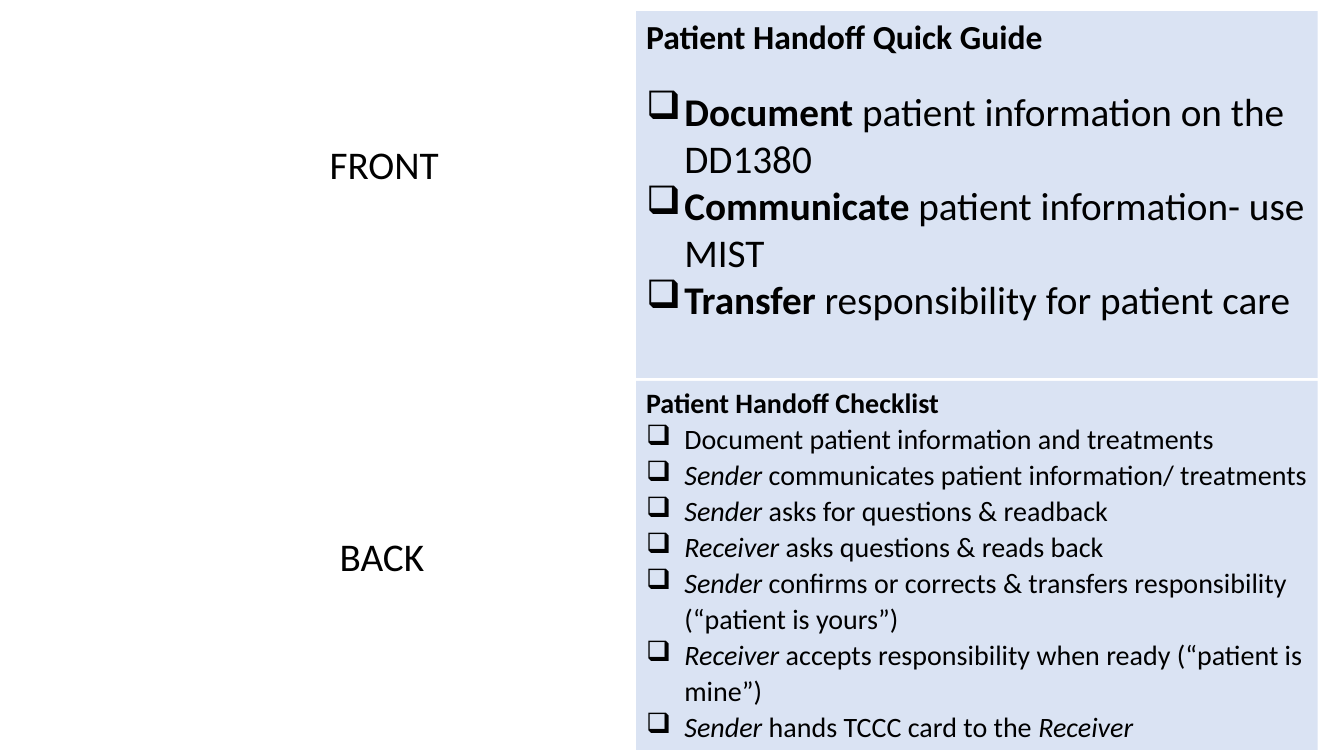
import pptx
import pptx.dml.color
import pptx.enum.shapes
import pptx.enum.text
import pptx.util
from pptx.oxml.xmlchemy import OxmlElement

Inches = pptx.util.Inches
Pt = pptx.util.Pt
BLACK = pptx.dml.color.RGBColor(0x00, 0x00, 0x00)
PALE_BLUE = pptx.dml.color.RGBColor(0xDA, 0xE3, 0xF3)
FONT = "Calibri"

SLIDE_WIDTH, SLIDE_HEIGHT = 13.33, 7.5
CARD_LEFT, CARD_WIDTH = 6.31, 6.76
ITEM_INDENT = 0.38

BOLD = {"bold": True}
ITALIC = {"italic": True}
PLAIN = {}

GUIDE_STEPS = [
    [("Document", BOLD), (" patient information on the DD1380", PLAIN)],
    [("Communicate ", BOLD), ("patient information- use MIST", PLAIN)],
    [("Transfer ", BOLD), ("responsibility for patient care", PLAIN)],
]
CHECKLIST_STEPS = [
    [("Document patient information and treatments", PLAIN)],
    [("Sender ", ITALIC), ("communicates patient information/ treatments", PLAIN)],
    [("Sender ", ITALIC), ("asks for questions & readback", PLAIN)],
    [("Receiver ", ITALIC), ("asks questions & reads back", PLAIN)],
    [("Sender ", ITALIC),
     ("confirms or corrects & transfers responsibility (“patient is yours”)", PLAIN)],
    [("Receiver", ITALIC),
     (" accepts responsibility when ready (“patient is mine”)", PLAIN)],
    [("Sender", ITALIC), (" hands TCCC card to the ", PLAIN), ("Receiver", ITALIC)],
]


def write_runs(paragraph, runs, size):
    paragraph.alignment = pptx.enum.text.PP_ALIGN.LEFT
    for words, emphasis in runs:
        run = paragraph.add_run()
        run.text = words
        run.font.color.rgb = BLACK
        for name, value in {"name": FONT, "size": Pt(size), **emphasis}.items():
            setattr(run.font, name, value)


def add_checkbox(paragraph):
    properties = paragraph._p.get_or_add_pPr()
    properties.set("marL", str(Inches(ITEM_INDENT)))
    properties.set("indent", str(-Inches(ITEM_INDENT)))
    bullet = OxmlElement("a:buChar")
    bullet.set("char", "❑")
    properties.append(bullet)


def add_card(slide, box, title, steps, title_size, step_size, title_gap, spacing):
    """Blue card with a bold title above a list of checkbox steps."""
    card = slide.shapes.add_shape(
        pptx.enum.shapes.MSO_SHAPE.RECTANGLE, *map(Inches, box))
    card.shadow.inherit = False
    card.fill.solid()
    card.fill.fore_color.rgb = PALE_BLUE
    card.line.fill.background()
    frame = card.text_frame
    frame.word_wrap = True
    frame.vertical_anchor = pptx.enum.text.MSO_ANCHOR.TOP

    heading = frame.paragraphs[0]
    heading.space_after = Pt(title_gap)
    write_runs(heading, [(title, BOLD)], title_size)
    for step in steps:
        item = frame.add_paragraph()
        item.line_spacing = spacing
        add_checkbox(item)
        write_runs(item, step, step_size)


def add_side_label(slide, box, side):
    """Name of the card side, left of its card."""
    label = slide.shapes.add_textbox(*map(Inches, box))
    label.text_frame.word_wrap = True
    write_runs(label.text_frame.paragraphs[0], [(side, PLAIN)], 28)


def main():
    deck = pptx.Presentation()
    deck.slide_width = Inches(SLIDE_WIDTH)
    deck.slide_height = Inches(SLIDE_HEIGHT)
    slide = deck.slides.add_slide(deck.slide_layouts[6])

    # Front of the card
    add_card(slide, (CARD_LEFT, 0.11, CARD_WIDTH, 3.64), "Patient Handoff Quick Guide",
             GUIDE_STEPS, title_size=24, step_size=28, title_gap=22, spacing=1.0)
    add_side_label(slide, (3.17, 1.34, 1.91, 0.57), "FRONT")

    # Back of the card
    add_card(slide, (CARD_LEFT, 3.78, CARD_WIDTH, 3.66), "Patient Handoff Checklist",
             CHECKLIST_STEPS, title_size=20, step_size=20, title_gap=0, spacing=1.07)
    add_side_label(slide, (3.27, 5.23, 1.91, 0.57), "BACK")

    deck.save("out.pptx")


if __name__ == "__main__":
    main()
